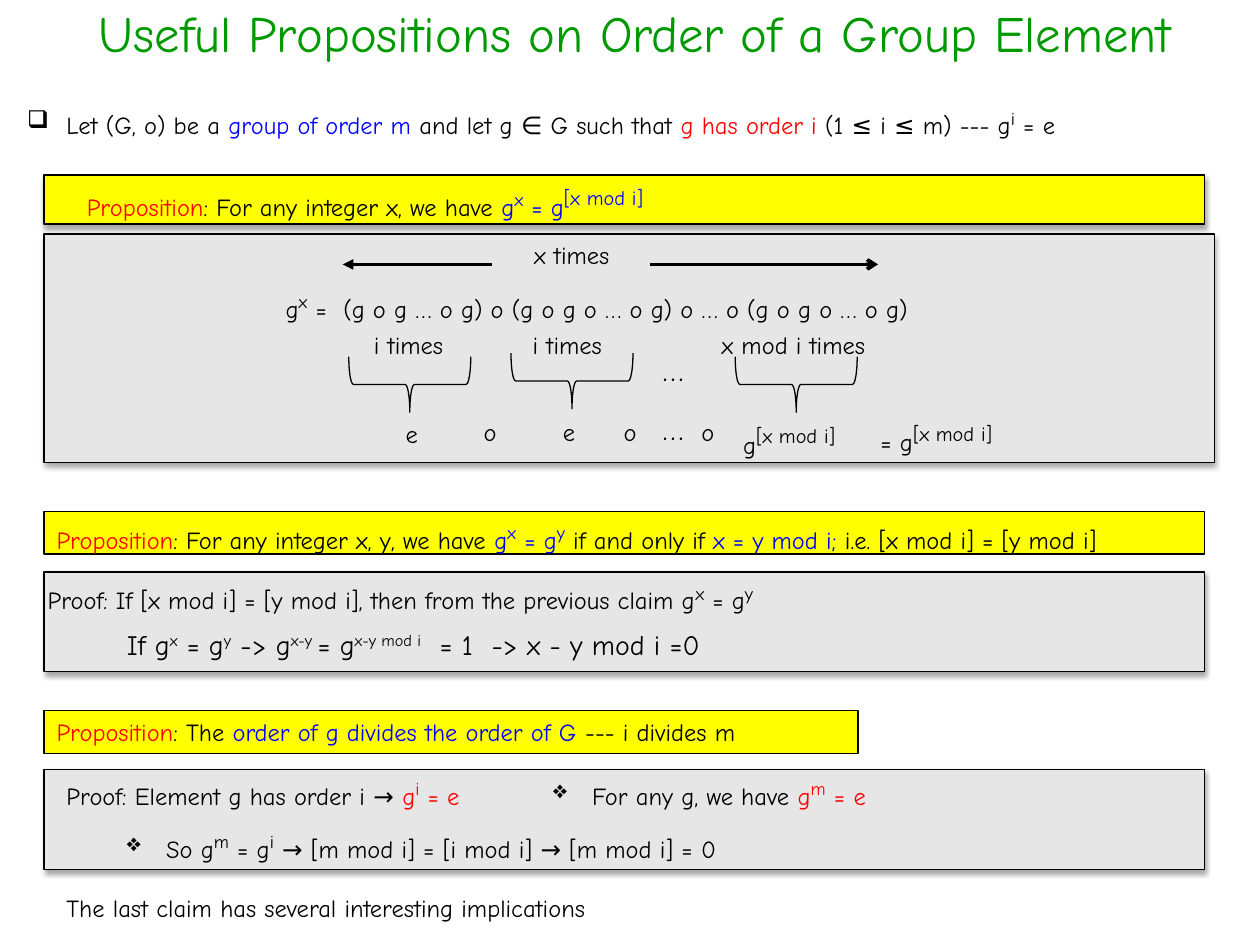
from lxml import etree
from pptx import Presentation
from pptx import util as u
from pptx.dml.color import RGBColor
from pptx.enum import shapes, text
from pptx.oxml import ns, parse_xml

Cm, Pt = u.Cm, u.Pt
FONT = "Comic Neue"
COLOURS = {"black": "000000", "red": "FF0000", "blue": "0000FF", "green": "009900",
           "yellow": "FFFF00", "grey": "E6E6E6"}
ROW_H = 0.86
HANG = 0.79
SHADOW = (f'<a:effectLst {ns.nsdecls("a")}><a:outerShdw blurRad="39370" dist="22860" '
          'dir="5400000" rotWithShape="0"><a:srgbClr val="000000"><a:alpha val="35000"/>'
          '</a:srgbClr></a:outerShdw></a:effectLst>')


def rgb(name):
    return RGBColor.from_string(COLOURS[name])


def place(x, y, w, h):
    return Cm(x), Cm(y), Cm(w), Cm(h)


def write(sp, runs, size=14, align=text.PP_ALIGN.LEFT, bullet=None):
    """Fill a shape with runs given as (text, colour, superscript size)."""
    tf = sp.text_frame
    frame = {"word_wrap": True, "vertical_anchor": text.MSO_ANCHOR.TOP}
    for name, value in frame.items():
        setattr(tf, name, value)
    p = tf.paragraphs[0]
    p.alignment = align
    if bullet:
        pPr = p._p.get_or_add_pPr()
        pPr.set("marL", str(Cm(HANG)))
        pPr.set("indent", str(-Cm(HANG)))
        etree.SubElement(pPr, ns.qn("a:buChar")).set("char", bullet)
    for words, colour, sup in runs:
        r = p.add_run()
        r.text = words
        for name, value in {"name": FONT, "size": Pt(sup or size)}.items():
            setattr(r.font, name, value)
        r.font.color.rgb = rgb(colour)
        if sup:
            r.font._rPr.set("baseline", "30000")


def run(words, colour="black", sup=0):
    return words, colour, sup


def power(base, exponent, colour="black", sup=18):
    return [run(base, colour), run(exponent, colour, sup)]


def label(s, x, y, w, runs, h=ROW_H, **style):
    if isinstance(runs, str):
        runs = [run(runs)]
    write(s.shapes.add_textbox(*place(x, y, w, h)), runs, **style)


def panel(s, box, fill, shadow=True):
    sp = s.shapes.add_shape(shapes.MSO_SHAPE.RECTANGLE, *place(*box))
    sp.shadow.inherit = False
    sp.fill.solid()
    sp.fill.fore_color.rgb = rgb(fill)
    sp.line.color.rgb = rgb("black")
    sp.line.width = Pt(0.75)
    if shadow:
        spPr = sp._element.spPr
        spPr.replace(spPr.find(ns.qn("a:effectLst")), parse_xml(SHADOW))
    return sp


def proposition(s, box, runs, inset=0.25, shadow=False):
    sp = panel(s, box, "yellow", shadow)
    sp.text_frame.margin_left = Cm(inset)
    write(sp, [run("Proposition", "red")] + runs)


def arrow(s, x1, x2, y, end, head):
    c = s.shapes.add_connector(shapes.MSO_CONNECTOR.STRAIGHT, Cm(x1), Cm(y), Cm(x2), Cm(y))
    c.line.color.rgb = rgb("black")
    c.line.width = Pt(2)
    etree.SubElement(c.line._get_or_add_ln(), ns.qn(f"a:{end}")).set("type", head)
    etree.SubElement(c._element.spPr, ns.qn("a:effectLst"))


def brace(s, x, y):
    sp = s.shapes.add_shape(shapes.MSO_SHAPE.RIGHT_BRACE, *place(x, y, 1.12, 2.46))
    sp.shadow.inherit = False
    sp.rotation = 90
    sp.fill.background()
    sp.line.color.rgb = rgb("black")
    sp.line.width = Pt(0.75)


def grouping_diagram(s, box):
    """Show g to the x split into blocks of i factors."""
    x, y = box[:2]
    panel(s, box, "grey")
    arrow(s, x + 12.22, x + 16.81, y + 0.61, "tailEnd", "arrow")
    arrow(s, x + 6.02, x + 9.02, y + 0.61, "headEnd", "triangle")
    label(s, x + 9.63, y, 2.39, "x times")
    label(s, x + 4.62, y + 0.94, 15.19, power("g", "x") + [
        run(" =  (g o g … o g) o (g o g o … o g) o … o (g o g o … o g)")])

    for dx, dy in ((6.81, 1.8), (10.08, 1.73), (14.6, 1.8)):
        brace(s, x + dx, y + dy)
    for dx, w, words in ((6.4, 2.39, "i times"), (9.6, 2.39, "i times"),
                         (13.41, 4.78, "x mod i times")):
        label(s, x + dx, y + 1.8, w, words)

    for dx, dy, words in ((7.04, 3.61, "e"), (8.61, 3.56, "o"), (10.21, 3.56, "e"),
                          (11.43, 3.56, "o"), (13, 3.56, "o")):
        label(s, x + dx, y + dy, 0.79, words)
    for dy in (2.21, 3.4):
        label(s, x + 12.22, y + dy, 1.14, "…", h=1.07, size=18)
    label(s, x + 13.84, y + 3.61, 2.77, power("g", "[x mod i]", sup=20))
    label(s, x + 16.61, y + 3.56, 5.94, power("= g", "[x mod i]", sup=20))


def equality_proof(s, box):
    x, y = box[:2]
    panel(s, box, "grey")
    label(s, x - 0.18, y, 24.61,
          power("Proof: If [x mod i] = [y mod i], then from the previous claim g", "x")
          + power(" = g", "y"))
    label(s, x + 1.42, y + 0.99, 24.61,
          power("If g", "x", sup=16) + power(" = g", "y", sup=16)
          + power(" -> g", "x-y ", sup=16) + power("= g", "x-y mod i", sup=16)
          + [run("  = 1  -> x - y mod i =0")], h=0.94, size=16)


def divisor_proof(s, box):
    x, y = box[:2]
    panel(s, box, "grey")
    label(s, x + 0.2, y - 0.05, 9.6, [run("Proof: Element g has order i → ")]
          + power("g", "i", "red") + [run(" = e", "red")])
    label(s, x + 10.01, y - 0.05, 8.41, [run("For any g, we have ")]
          + power("g", "m", "red") + [run(" = e", "red")], bullet="❖")
    label(s, x + 1.42, y + 1.02, 22, power("So g", "m") + power(" = g", "i")
          + [run(" → [m mod i] = [i mod i] → [m mod i] = 0")], bullet="❖")


def main():
    prs = Presentation()
    prs.slide_width, prs.slide_height = Cm(25.4), Cm(19.05)
    s = prs.slides.add_slide(prs.slide_layouts[6])
    left, width = 0.89, 23.39

    label(s, -0.89, -0.08, 27.41,
          [run("Useful Propositions on Order of a Group Element", "green")],
          h=1.19, size=29, align=text.PP_ALIGN.CENTER)
    label(s, 0.3, 1.96, 24.61, [
        run("Let (G, o) be a "), run("group of order m ", "blue"),
        run("and let g ∈ G such that "), run("g has order i ", "red"),
        *power("(1 ≤ i ≤ m) --- g", "i"), run(" = e")], bullet="❑")

    proposition(s, (left, 3.53, width, 0.99), [
        run(": For any integer x, we have "), *power("g", "x", "blue"),
        *power(" = g", "[x mod i]", "blue", 20)], inset=0.86, shadow=True)
    grouping_diagram(s, (left, 4.72, 23.6, 4.6))

    proposition(s, (left, 10.31, width, ROW_H), [
        run(": For any integer x, y, we have "), *power("g", "x", "blue"),
        *power(" = g", "y", "blue"), run(" if and only if"),
        run(" x = y mod i; ", "blue"), run("i.e. [x mod i] = [y mod i]")])
    equality_proof(s, (left, 11.53, width, 2.01))

    proposition(s, (left, 14.33, 16.41, ROW_H), [
        run(": The "), run("order of g divides the order of G ", "blue"),
        run("--- i divides m")])
    divisor_proof(s, (left, 15.52, width, 2.01))
    label(s, 1.09, 17.88, 24.61, "The last claim has several interesting implications")

    prs.save("out.pptx")


if __name__ == "__main__":
    main()
